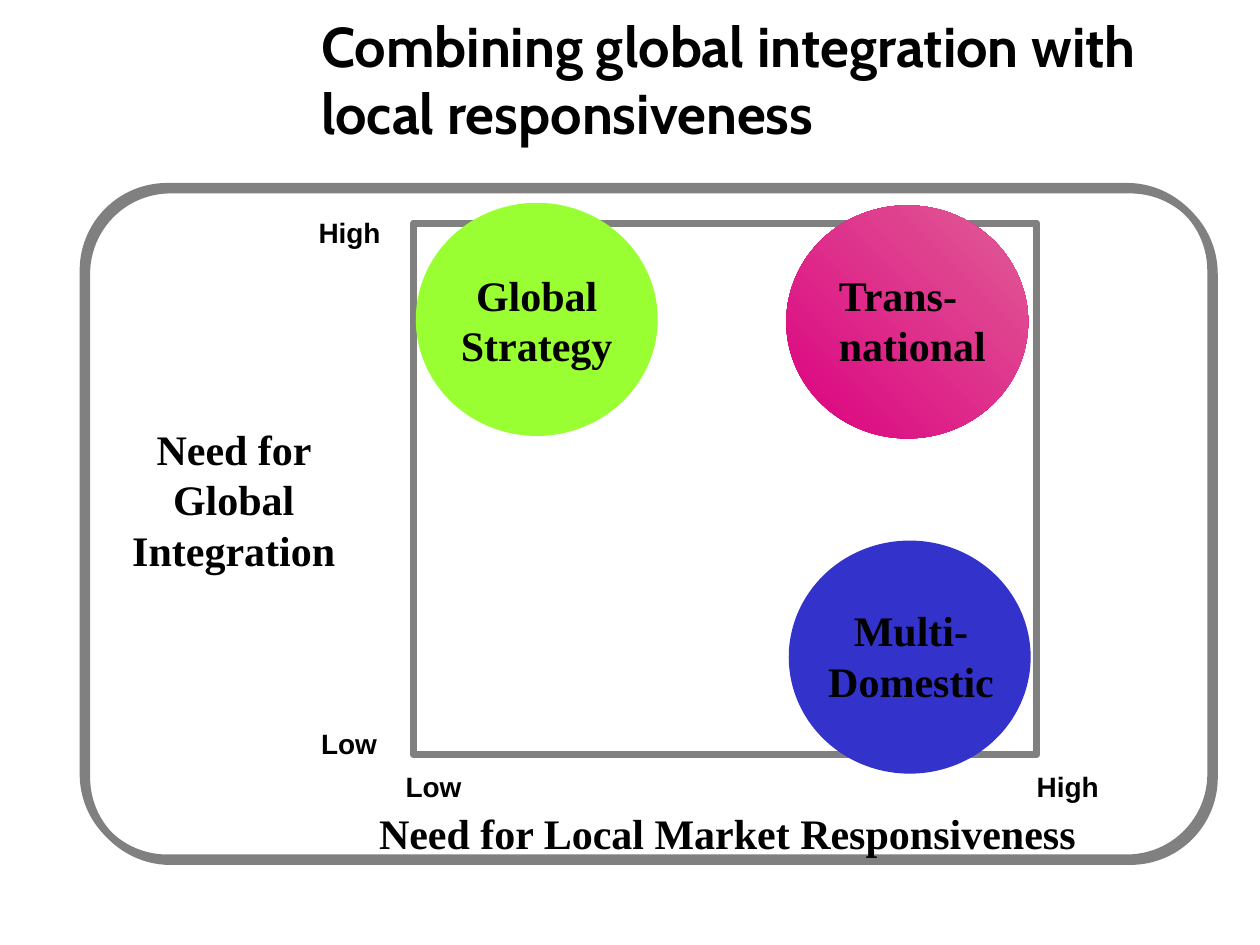
from dataclasses import dataclass

from lxml.etree import SubElement
from pptx import Presentation
from pptx.dml.color import RGBColor
from pptx.enum.shapes import MSO_SHAPE
from pptx.enum.text import MSO_AUTO_SIZE, PP_ALIGN
from pptx.oxml.ns import qn
from pptx.util import Inches, Pt

COLUMNS, ROWS = 100, 75
SERIF, SANS, TITLE = "Times New Roman", "Arial", "Cabin"
BLACK, GRAY = "000000", "808080"
CIRCLE_WIDTH, CIRCLE_HEIGHT = 19.2, 18.5

deck = Presentation()
deck.slide_width, deck.slide_height = Inches(10), Inches(7.5)
page = deck.slides.add_slide(deck.slide_layouts[6])


@dataclass(frozen=True)
class Area:
    """A rectangle in columns and rows of the page grid."""
    column: float
    row: float
    columns: float
    rows: float

    def lengths(self) -> tuple[int, int, int, int]:
        cell_width = deck.slide_width / COLUMNS
        cell_height = deck.slide_height / ROWS
        return (round(self.column * cell_width), round(self.row * cell_height),
                round(self.columns * cell_width), round(self.rows * cell_height))


@dataclass(frozen=True)
class Strategy:
    column: float
    row: float
    colors: tuple[str, ...]
    label: str
    label_area: Area
    align: PP_ALIGN = PP_ALIGN.CENTER


def color(value: str) -> RGBColor:
    return RGBColor.from_string(value)


def write(text: str, area: Area, *, font: str = SERIF, size: float = 24,
          align: PP_ALIGN = PP_ALIGN.LEFT, wrap: bool = False) -> None:
    frame = page.shapes.add_textbox(*area.lengths()).text_frame
    frame.word_wrap = wrap
    frame.auto_size = MSO_AUTO_SIZE.SHAPE_TO_FIT_TEXT
    frame.text = text
    for para in frame.paragraphs:
        para.alignment = align
        for span in para.runs:
            span.font.name = font
            span.font.size = Pt(size)
            span.font.bold = True
            span.font.color.rgb = color(BLACK)


def draw_frame(kind: MSO_SHAPE, area: Area):
    frame = page.shapes.add_shape(kind, *area.lengths())
    frame.shadow.inherit = False
    frame.fill.background()
    frame.line.color.rgb = color(GRAY)
    frame.line.width = Pt(4)
    return frame


def cast_shadow(shape, value: str, distance: float, degrees: int) -> None:
    effects = shape._element.spPr.find(qn("a:effectLst"))
    shadow = SubElement(effects, qn("a:outerShdw"), dist=str(Pt(distance)),
                        dir=str(degrees * 60000), algn="ctr", rotWithShape="0")
    SubElement(shadow, qn("a:srgbClr"), val=value)


def draw_strategy(strategy: Strategy) -> None:
    area = Area(strategy.column, strategy.row, CIRCLE_WIDTH, CIRCLE_HEIGHT)
    circle = page.shapes.add_shape(MSO_SHAPE.OVAL, *area.lengths())
    circle.shadow.inherit = False
    circle.line.fill.background()
    if len(strategy.colors) == 1:
        circle.fill.solid()
        circle.fill.fore_color.rgb = color(strategy.colors[0])
    else:
        circle.fill.gradient()
        circle.fill.gradient_angle = 45
        for stop, value in zip(circle.fill.gradient_stops, strategy.colors):
            stop.color.rgb = color(value)
    write(strategy.label, strategy.label_area, align=strategy.align)


AXIS_MARKS = [
    ("Low", Area(24.5, 57.2, 6.5, 3.4)),
    ("High", Area(24.3, 16.6, 7, 3.4)),
    ("Low", Area(31.2, 60.6, 6.5, 3.4)),
    ("High", Area(81.3, 60.6, 7, 3.4)),
]
STRATEGIES = [
    Strategy(62.6, 42.9, ("3333CC",), "Multi-\nDomestic", Area(64.7, 47.5, 15.2, 9)),
    Strategy(33, 16.1, ("99FF33",), "Global\nStrategy", Area(35.6, 20.9, 14, 9)),
    Strategy(62.4, 16.3, ("DC0081", "E05E95"), "Trans-\nnational",
             Area(65.6, 20.9, 13.7, 9), PP_ALIGN.LEFT),
]

write("Combining global integration with local responsiveness",
      Area(24.5, 0.4, 71.6, 11.8), font=TITLE, size=32, wrap=True)

panel = draw_frame(MSO_SHAPE.ROUNDED_RECTANGLE, Area(6.6, 14.8, 89.5, 53.3))
panel.adjustments[0] = 0.125
cast_shadow(panel, GRAY, distance=2.8, degrees=45)
draw_frame(MSO_SHAPE.RECTANGLE, Area(32.8, 17.7, 49.5, 42.2))

write("Need for Global Integration", Area(7.2, 33.1, 22.7, 11.9),
      align=PP_ALIGN.CENTER, wrap=True)
write("Need for Local Market Responsiveness", Area(29.1, 63.6, 57.9, 4.6))
for mark, mark_area in AXIS_MARKS:
    write(mark, mark_area, font=SANS, size=16)
for strategy in STRATEGIES:
    draw_strategy(strategy)

deck.save("out.pptx")
